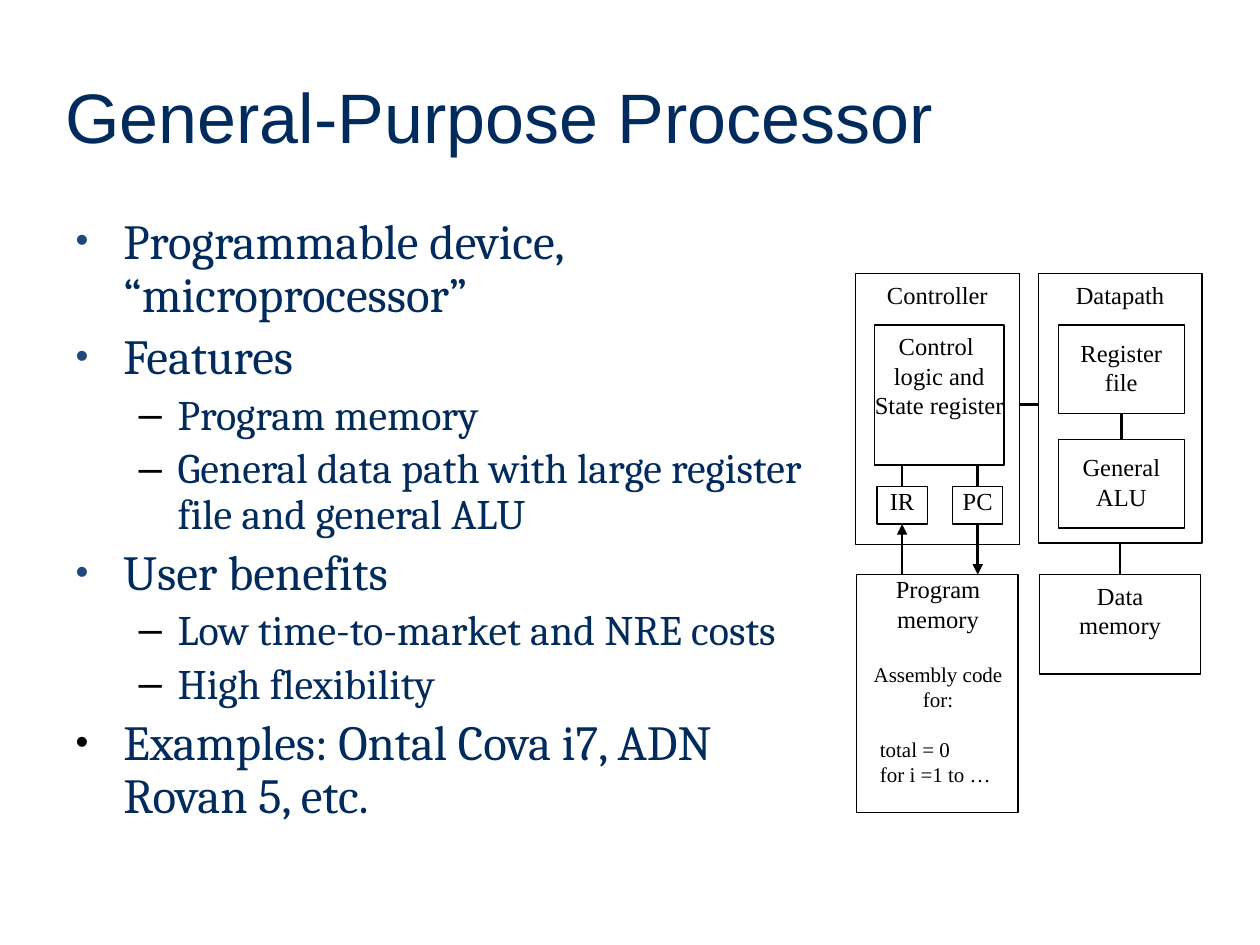
from lxml import etree
from pptx import Presentation
from pptx.dml.color import RGBColor
from pptx.enum.shapes import MSO_CONNECTOR, MSO_SHAPE
from pptx.enum.text import MSO_ANCHOR, MSO_AUTO_SIZE, PP_ALIGN
from pptx.oxml.ns import qn
from pptx.util import Inches, Pt

LEFT, MID = PP_ALIGN.LEFT, PP_ALIGN.CENTER
TOP, CENTER = MSO_ANCHOR.TOP, MSO_ANCHOR.MIDDLE
FIXED = MSO_AUTO_SIZE.NONE
RECT, LINE = MSO_SHAPE.RECTANGLE, MSO_CONNECTOR.STRAIGHT

THEME = {
    "navy": "002B5C", "blue": "1F497D", "black": "000000",
    "head": "Arial", "body": "Cambria", "label": "Times New Roman",
    "title": 40, "levels": (28, 24), "box": 14, "code": 12,
    "edge": 0.75, "wire": 1.5,
}

TITLE = "General-Purpose Processor"
POINTS = [
    (0, "Programmable device, “microprocessor”", "blue"),
    (0, "Features", "blue"),
    (1, "Program memory", "black"),
    (1, "General data path with large register file and general ALU", "black"),
    (0, "User benefits", "blue"),
    (1, "Low time-to-market and NRE costs", "black"),
    (1, "High flexibility", "black"),
    (0, "Examples: Ontal Cova i7, ADN Rovan 5, etc.", "black"),
]
LEVELS = [(0.38, -0.38, "•"), (0.81, -0.31, "–")]

BOXES = [
    ("controller", (6.79, 2.17, 1.3, 2.15), 0.05, ["Controller"]),
    ("datapath", (8.24, 2.17, 1.3, 2.14), 0.05, ["Datapath"]),
    ("control", (6.94, 2.58, 1.03, 1.11), 0.05,
     ["Control ", "logic and State register"]),
    ("ir", (6.96, 3.86, 0.4, 0.3), 0, ["IR"]),
    ("pc", (7.56, 3.86, 0.4, 0.3), 0, ["PC"]),
    ("register", (8.4, 2.58, 1, 0.7), 0.1, ["Register", "file"]),
    ("alu", (8.4, 3.49, 1, 0.7), 0.1, ["General", "ALU"]),
    ("program", (6.8, 4.56, 1.28, 1.89), 0, []),
    ("data", (8.25, 4.56, 1.28, 0.79), 0.05, ["Data", "memory"]),
]
LABEL = ((6.8, 4.51, 1.29, 0.6), "Program memory")
CODE = ((6.9, 5.2, 1.09, 1.1), [
    ("Assembly code for:", MID, 0),
    ("  total = 0", LEFT, 14),
    ("  for i =1 to …", LEFT, 0),
])

WIRES = [
    ((8.09, 3.21), None, (8.24, 3.21), None, False),
    ((8.9, 3.28), ("register", 2), (8.9, 3.49), ("alu", 0), False),
    ((8.89, 4.31), ("datapath", 2), (8.89, 4.56), ("data", 0), False),
    ((7.16, 3.69), None, (7.16, 3.86), ("ir", 0), False),
    ((7.76, 3.69), None, (7.76, 3.86), ("pc", 0), False),
    ((7.16, 4.56), None, (7.16, 4.16), ("ir", 2), True),
    ((7.76, 4.16), ("pc", 2), (7.76, 4.56), None, True),
]


def color(name):
    return RGBColor.from_string(THEME[name])


def write(para, text, face, size, tint, align=LEFT):
    para.alignment = align
    run = para.add_run()
    run.text = text
    run.font.name = THEME[face]
    run.font.size = Pt(size)
    run.font.color.rgb = color(tint)


def place(shape, area):
    shape.left, shape.top, shape.width, shape.height = map(Inches, area)


def setup(frame, inset, anchor=TOP):
    frame.word_wrap = True
    frame.auto_size = FIXED
    frame.vertical_anchor = anchor
    frame.margin_left = frame.margin_right = Inches(inset[0])
    frame.margin_top = frame.margin_bottom = Inches(inset[1])


def paras(frame, items):
    for i, item in enumerate(items):
        yield (frame.add_paragraph() if i else frame.paragraphs[0]), item


def bullet(para, level, tint):
    left, hang, mark = LEVELS[level]
    props = para._p.get_or_add_pPr()
    props.set("marL", str(Inches(left)))
    props.set("indent", str(Inches(hang)))
    ink = etree.SubElement(props, qn("a:buClr"))
    etree.SubElement(ink, qn("a:srgbClr"), val=THEME[tint])
    if level == 0:
        etree.SubElement(props, qn("a:buSzPct"), val="75000")
    etree.SubElement(props, qn("a:buFont"), typeface=THEME["head"])
    etree.SubElement(props, qn("a:buChar"), char=mark)


def draw_text(slide):
    title, body = slide.shapes.title, slide.placeholders[1]
    place(title, (0.42, 0.42, 9.08, 1))
    setup(title.text_frame, (0.1, 0.05), CENTER)
    write(title.text_frame.paragraphs[0], TITLE, "head", THEME["title"], "navy")

    place(body, (0.5, 1.67, 6.27, 5.03))
    setup(body.text_frame, (0.1, 0.05))
    for para, (level, text, tint) in paras(body.text_frame, POINTS):
        size = THEME["levels"][level]
        para.level = level
        bullet(para, level, tint)
        para.line_spacing = 0.9
        para.space_before = Pt(0 if text == POINTS[0][1] else size * 0.2)
        write(para, text, "body", size, "navy")


def draw_boxes(slide):
    made = {}
    for name, area, inset, lines in BOXES:
        box = slide.shapes.add_shape(RECT, *map(Inches, area))
        box.shadow.inherit = False
        box.fill.background()
        box.line.color.rgb = color("black")
        box.line.width = Pt(THEME["edge"])
        setup(box.text_frame, (0, inset))
        for para, text in paras(box.text_frame, lines):
            write(para, text, "label", THEME["box"], "black", MID)
        made[name] = box
    return made


def draw_notes(slide):
    area, text = LABEL
    label = slide.shapes.add_textbox(*map(Inches, area)).text_frame
    setup(label, (0, 0.05))
    write(label.paragraphs[0], text, "label", THEME["box"], "black", MID)

    area, lines = CODE
    code = slide.shapes.add_textbox(*map(Inches, area)).text_frame
    setup(code, (0, 0.05))
    for para, (text, align, gap) in paras(code, lines):
        para.space_before = Pt(gap)
        write(para, text, "label", THEME["code"], "black", align)


def draw_wires(slide, boxes):
    for start, source, end, target, arrow in WIRES:
        wire = slide.shapes.add_connector(LINE, *map(Inches, start + end))
        if source:
            wire.begin_connect(boxes[source[0]], source[1])
        if target:
            wire.end_connect(boxes[target[0]], target[1])
        wire.line.color.rgb = color("black")
        wire.line.width = Pt(THEME["wire"])
        props = wire._element.spPr
        if arrow:
            etree.SubElement(props.find(qn("a:ln")), qn("a:tailEnd"), type="triangle")
        etree.SubElement(props, qn("a:effectLst"))


def main():
    deck = Presentation()
    deck.slide_width, deck.slide_height = Inches(10), Inches(7.5)
    slide = deck.slides.add_slide(deck.slide_layouts[1])
    draw_text(slide)
    boxes = draw_boxes(slide)
    draw_notes(slide)
    draw_wires(slide, boxes)
    deck.save("out.pptx")


if __name__ == "__main__":
    main()
